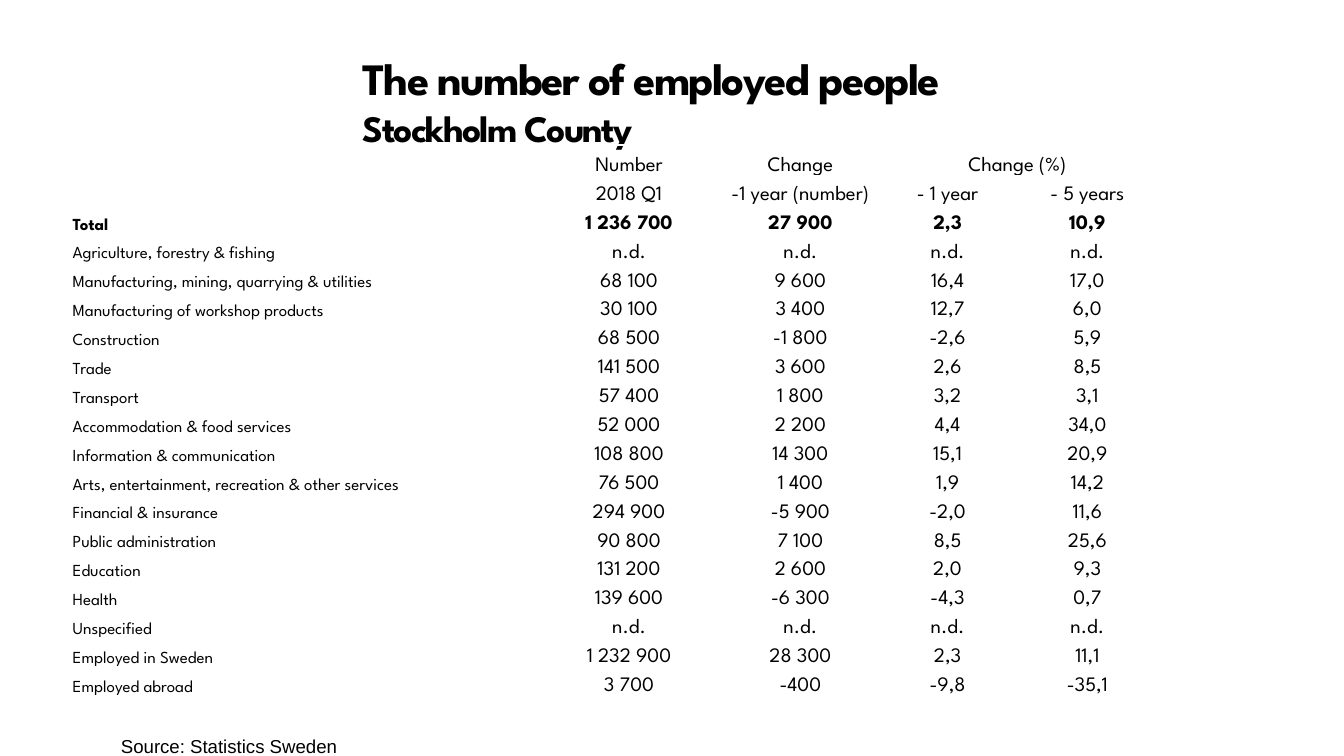
import copy

import pptx
import pptx.dml.color
import pptx.enum.text
import pptx.util

Pt = pptx.util.Pt
ALIGN = pptx.enum.text.PP_ALIGN
ANCHOR = pptx.enum.text.MSO_ANCHOR
BLACK = pptx.dml.color.RGBColor(0, 0, 0)
HEADING_FONT = "League Spartan"

prs = pptx.Presentation()
prs.slide_width, prs.slide_height = Pt(720), Pt(405)
s = prs.slides.add_slide(prs.slide_layouts[5])


def add_text(p, text, size=11, font=HEADING_FONT, bold=False, align=ALIGN.LEFT, spacing=None):
    p.alignment = align
    r = p.add_run()
    r.text = text
    r.font.size, r.font.name, r.font.bold = Pt(size), font, bold
    r.font.color.rgb = BLACK
    if spacing is not None:
        r.font._element.set("spc", str(round(spacing * 100)))
    return r


def set_frame(tf, wrap):
    tf.margin_left = tf.margin_right = tf.margin_top = tf.margin_bottom = 0
    tf.word_wrap = wrap
    tf.auto_size = pptx.enum.text.MSO_AUTO_SIZE.NONE
    tf.vertical_anchor = ANCHOR.TOP


# Title
sp = s.shapes.title
sp.left, sp.top, sp.width, sp.height = Pt(194.4), Pt(27.4), Pt(662.4), Pt(57.6)
set_frame(sp.text_frame, True)
p = sp.text_frame.paragraphs[0]
r = add_text(p, "The number of employed people", size=24, bold=True, spacing=-0.9)
p.add_line_break()
p._p[-1].append(copy.deepcopy(r.font._element))  # the break keeps the size of its line
add_text(p, "Stockholm County", size=20, bold=True, spacing=-0.9)

# Source line
sp = s.shapes.add_textbox(Pt(64.8), Pt(381.6), Pt(72), Pt(30.2))
set_frame(sp.text_frame, False)
p = sp.text_frame.paragraphs[0]
p.line_spacing = Pt(24)
add_text(p, "Source: Statistics Sweden", size=10, font="Arial")

# Employment table
ROWS = [
    ("", "Number", "Change", "Change (%)", ""),
    ("", "2018 Q1", "-1 year (number)", "- 1 year", "- 5 years"),
    ("Total", "1 236 700", "27 900", "2,3", "10,9"),
    ("Agriculture, forestry & fishing", "n.d.", "n.d.", "n.d.", "n.d."),
    ("Manufacturing, mining, quarrying & utilities", "68 100", "9 600", "16,4", "17,0"),
    ("Manufacturing of workshop products", "30 100", "3 400", "12,7", "6,0"),
    ("Construction", "68 500", "-1 800", "-2,6", "5,9"),
    ("Trade", "141 500", "3 600", "2,6", "8,5"),
    ("Transport", "57 400", "1 800", "3,2", "3,1"),
    ("Accommodation & food services", "52 000", "2 200", "4,4", "34,0"),
    ("Information & communication", "108 800", "14 300", "15,1", "20,9"),
    ("Arts, entertainment, recreation & other services", "76 500", "1 400", "1,9", "14,2"),
    ("Financial & insurance", "294 900", "-5 900", "-2,0", "11,6"),
    ("Public administration", "90 800", "7 100", "8,5", "25,6"),
    ("Education", "131 200", "2 600", "2,0", "9,3"),
    ("Health", "139 600", "-6 300", "-4,3", "0,7"),
    ("Unspecified", "n.d.", "n.d.", "n.d.", "n.d."),
    ("Employed in Sweden", "1 232 900", "28 300", "2,3", "11,1"),
    ("Employed abroad", "3 700", "-400", "-9,8", "-35,1"),
]
COL_WIDTHS = [248.4, 100.8, 82.8, 74.9, 74.9]
ROW_HEIGHT = 15.5

frame = s.shapes.add_table(len(ROWS), len(COL_WIDTHS), Pt(38.2), Pt(77.8),
                           Pt(sum(COL_WIDTHS)), Pt(ROW_HEIGHT * len(ROWS)))
table = frame.table
table.first_row = table.horz_banding = False
for column, width in zip(table.columns, COL_WIDTHS):
    column.width = Pt(width)
table.cell(0, 3).merge(table.cell(0, 4))

for i, row in enumerate(ROWS):
    table.rows[i].height = Pt(16.5 if i == 0 else ROW_HEIGHT)
    for j, text in enumerate(row):
        cell = table.cell(i, j)
        cell.fill.background()
        cell.vertical_anchor = ANCHOR.BOTTOM
        cell.margin_left = cell.margin_right = cell.margin_top = Pt(0.75)
        cell.margin_bottom = 0
        p = cell.text_frame.paragraphs[0]
        if text:
            add_text(p, text, size=11 if j else 9, bold=row[0] == "Total",
                     align=ALIGN.CENTER if j else ALIGN.LEFT)
        else:
            p._p.get_or_add_endParaRPr().set("sz", "900")  # keeps empty cells low

prs.save("out.pptx")
